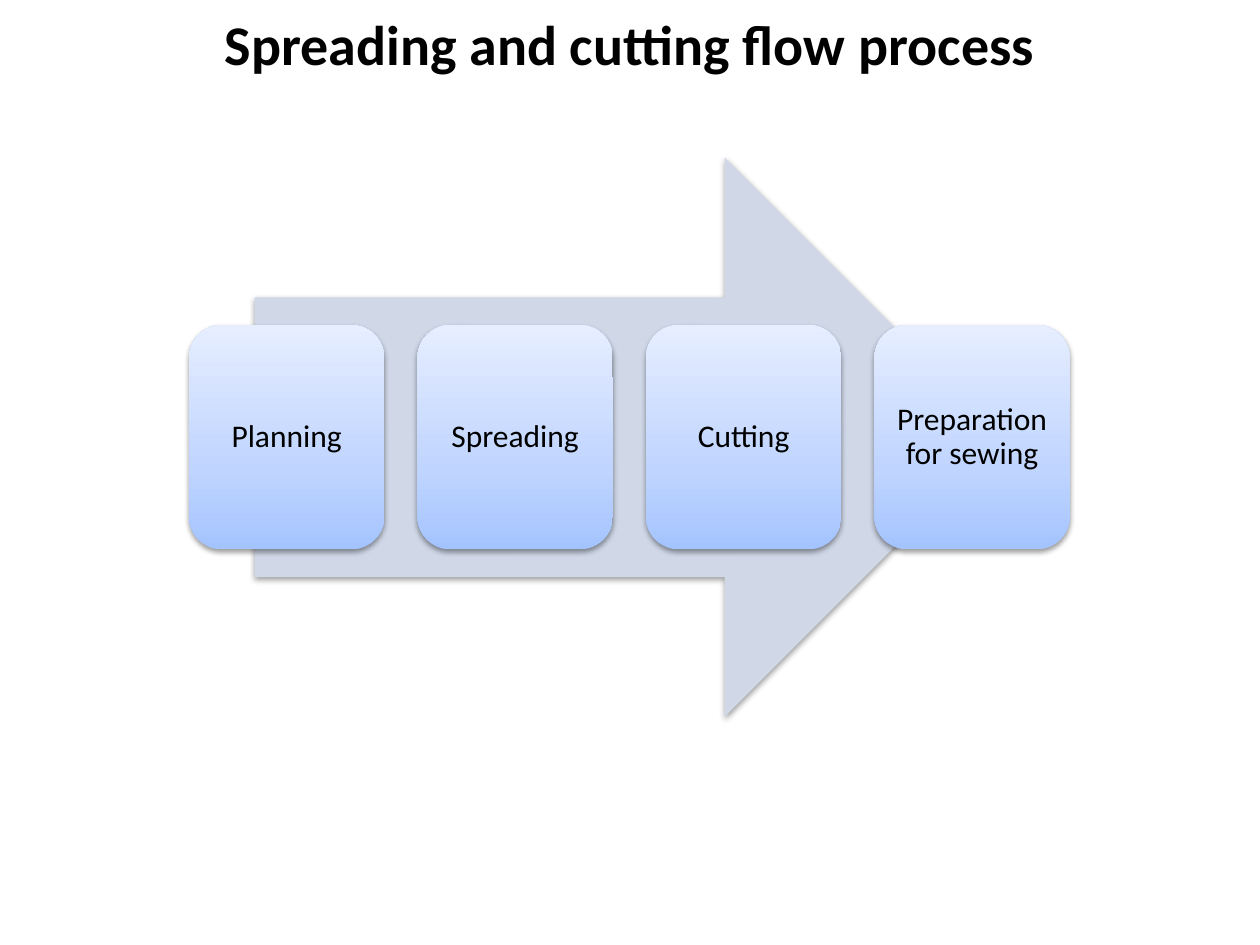
from lxml.etree import SubElement
from pptx import Presentation
from pptx.dml.color import RGBColor
from pptx.enum.shapes import MSO_SHAPE
from pptx.enum.text import MSO_ANCHOR, MSO_AUTO_SIZE, PP_ALIGN
from pptx.oxml.ns import qn
from pptx.util import Pt

PX = 9144
COLORS = {"ink": "000000", "arrow": "D0D8E8", "deep": "A4C4FF", "middle": "BFD4FF", "pale": "E6EEFF"}
CARD_STOPS = [(0, "deep"), (35, "middle"), (100, "pale")]
STEPS = ["Planning", "Spreading", "Cutting", "Preparation for sewing"]


def emu(*lengths):
    return [round(length * PX) for length in lengths]


def write_text(shape, text, size, bold=False, spacing=None, anchor=MSO_ANCHOR.TOP):
    frame = shape.text_frame
    frame.word_wrap = True
    frame.vertical_anchor = anchor
    para = frame.paragraphs[0]
    para.alignment = PP_ALIGN.CENTER
    para.line_spacing = spacing
    span = para.add_run()
    span.text = text
    span.font.name = "Calibri"
    span.font.size = Pt(size)
    span.font.bold = bold
    span.font.color.rgb = RGBColor.from_string(COLORS["ink"])
    return frame


def add_shadowed_shape(page, kind, box):
    shape = page.shapes.add_shape(kind, *emu(*box))
    shape.line.fill.background()
    shape.shadow.inherit = False
    effects = shape.element.spPr.find(qn("a:effectLst"))
    shadow = SubElement(effects, qn("a:outerShdw"), blurRad="40000", dist="20000", dir="5400000", rotWithShape="0")
    color = SubElement(shadow, qn("a:srgbClr"), val=COLORS["ink"])
    SubElement(color, qn("a:alpha"), val="38000")
    return shape


def fill_gradient(shape, stops, angle):
    shape.fill.gradient()
    shape.fill.gradient_angle = angle
    stop_list = shape.element.spPr.find(qn("a:gradFill")).find(qn("a:gsLst"))
    stop_list.clear()
    for percent, name in stops:
        stop = SubElement(stop_list, qn("a:gs"), pos=str(percent * 1000))
        SubElement(stop, qn("a:srgbClr"), val=COLORS[name])


def add_title(page, box, text):
    title = page.shapes.add_textbox(*emu(*box))
    frame = write_text(title, text, 32, bold=True)
    frame.auto_size = MSO_AUTO_SIZE.SHAPE_TO_FIT_TEXT


def add_card(page, box, text):
    card = add_shadowed_shape(page, MSO_SHAPE.ROUNDED_RECTANGLE, box)
    fill_gradient(card, CARD_STOPS, 90)
    frame = write_text(card, text, 18, spacing=0.9, anchor=MSO_ANCHOR.MIDDLE)
    frame.margin_left, frame.margin_top, frame.margin_right, frame.margin_bottom = emu(7, 7, 7, 7)


def add_process(page, box, steps):
    left, top, width, height = box
    arrow_width = 595
    arrow_box = (left + (width - arrow_width) / 2, top, arrow_width, height)
    arrow = add_shadowed_shape(page, MSO_SHAPE.RIGHT_ARROW, arrow_box)
    arrow.fill.solid()
    arrow.fill.fore_color.rgb = RGBColor.from_string(COLORS["arrow"])
    card_width, card_height = 155, 178
    pitch = (width - card_width) / (len(steps) - 1)
    card_top = top + (height - card_height) / 2
    for index, step in enumerate(steps):
        add_card(page, (left + index * pitch, card_top, card_width, card_height), step)


def main():
    deck = Presentation()
    deck.slide_width, deck.slide_height = emu(1000, 750)
    page = deck.slides.add_slide(deck.slide_layouts[6])
    add_title(page, (125, 3, 750, 64), "Spreading and cutting flow process")
    add_process(page, (150, 125, 699, 444), STEPS)
    deck.save("out.pptx")


if __name__ == "__main__":
    main()
